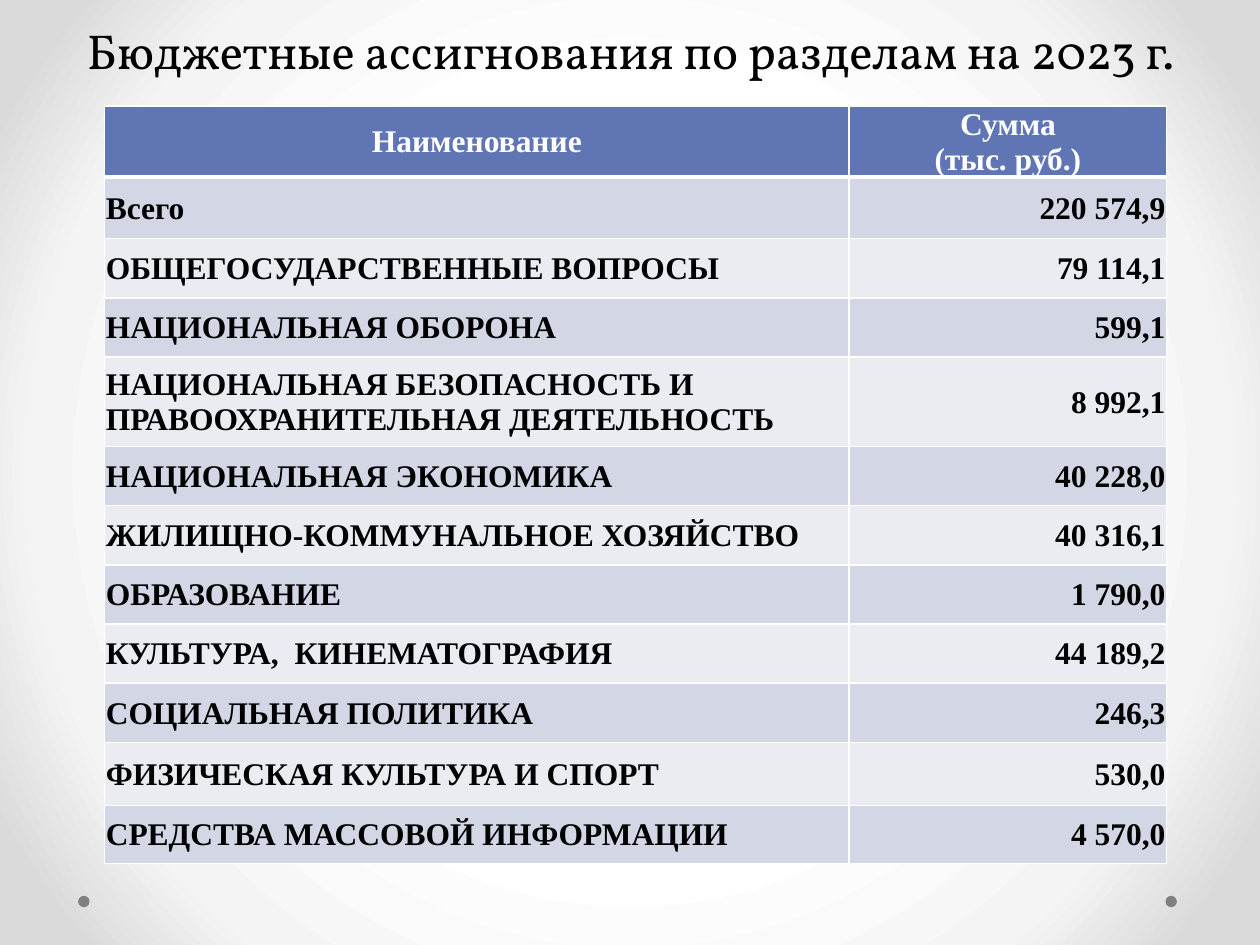
from dataclasses import dataclass

from pptx import Presentation
from pptx import oxml
from pptx.dml.color import RGBColor
from pptx.enum import shapes, text
from pptx.oxml import ns
from pptx.util import Inches, Pt

LEFT, CENTER, RIGHT, JUSTIFY = (
    text.PP_ALIGN.LEFT, text.PP_ALIGN.CENTER, text.PP_ALIGN.RIGHT, text.PP_ALIGN.JUSTIFY)


@dataclass(frozen=True)
class Theme:
    title_font: str = "Vollkorn"
    table_font: str = "Times New Roman"
    title_size: int = 28
    table_size: int = 18
    ink: str = "000000"
    white: str = "FFFFFF"
    header: str = "6076B4"
    bands: tuple = ("D2D6E5", "EAECF2")
    dot: str = "808080"
    backdrop: tuple = ((50, "FFFFFF"), (76, "F4F4F4"), (92, "DADADA"))


@dataclass(frozen=True)
class BudgetRow:
    name: str
    amount: str
    height: float = 0.47
    align: text.PP_ALIGN = JUSTIFY


THEME = Theme()
COLUMN_WIDTHS = (5.91, 2.52)
HEADER = BudgetRow("Наименование", "Сумма\v(тыс. руб.)", 0.55, CENTER)
ROWS = (
    BudgetRow("Всего", "220 574,9", 0.49, LEFT),
    BudgetRow("ОБЩЕГОСУДАРСТВЕННЫЕ ВОПРОСЫ", "79 114,1"),
    BudgetRow("НАЦИОНАЛЬНАЯ ОБОРОНА", "599,1", align=LEFT),
    BudgetRow("НАЦИОНАЛЬНАЯ БЕЗОПАСНОСТЬ И ПРАВООХРАНИТЕЛЬНАЯ ДЕЯТЕЛЬНОСТЬ",
              "8 992,1", 0.71, LEFT),
    BudgetRow("НАЦИОНАЛЬНАЯ ЭКОНОМИКА", "40 228,0"),
    BudgetRow("ЖИЛИЩНО-КОММУНАЛЬНОЕ ХОЗЯЙСТВО", "40 316,1"),
    BudgetRow("ОБРАЗОВАНИЕ", "1 790,0"),
    BudgetRow("КУЛЬТУРА,  КИНЕМАТОГРАФИЯ", "44 189,2"),
    BudgetRow("СОЦИАЛЬНАЯ ПОЛИТИКА", "246,3"),
    BudgetRow("ФИЗИЧЕСКАЯ КУЛЬТУРА И СПОРТ", "530,0", 0.5),
    BudgetRow("СРЕДСТВА МАССОВОЙ ИНФОРМАЦИИ", "4 570,0", 0.46),
)


def write(tf, content: str, *, font: str, size: int, color: str,
          align: text.PP_ALIGN, bold: bool = False) -> None:
    p = tf.paragraphs[0]
    p.text = content
    p.alignment = align
    for r in p.runs:
        r.font.name = font
        r.font.size = Pt(size)
        r.font.bold = bold
        r.font.color.rgb = RGBColor.from_string(color)


def set_backdrop(s) -> None:
    """Give the slide a radial gradient, which python-pptx cannot set itself."""
    stops = "".join(f'<a:gs pos="{pos * 1000}"><a:srgbClr val="{color}"/></a:gs>'
                    for pos, color in THEME.backdrop)
    bg = oxml.parse_xml(
        f'<p:bg {ns.nsdecls("p", "a")}><p:bgPr><a:gradFill rotWithShape="1">'
        f'<a:gsLst>{stops}</a:gsLst><a:path path="circle">'
        '<a:fillToRect l="50000" t="50000" r="50000" b="50000"/></a:path>'
        '</a:gradFill><a:effectLst/></p:bgPr></p:bg>')
    s.element.cSld.insert(0, bg)


def add_dot(s, left: float) -> None:
    sp = s.shapes.add_shape(shapes.MSO_SHAPE.OVAL, Inches(left), Inches(7.11),
                            Inches(0.09), Inches(0.09))
    sp.shadow.inherit = False
    sp.fill.solid()
    sp.fill.fore_color.rgb = RGBColor.from_string(THEME.dot)
    sp.line.fill.background()


def add_title(s, content: str) -> None:
    sp = s.shapes.title
    sp.left, sp.top, sp.width, sp.height = map(Inches, (0.28, 0.29, 9.45, 0.39))
    tf = sp.text_frame
    tf.auto_size = text.MSO_AUTO_SIZE.NONE
    tf.vertical_anchor = text.MSO_ANCHOR.BOTTOM
    write(tf, content, font=THEME.title_font, size=THEME.title_size,
          color=THEME.ink, align=CENTER)


def set_borders(cell, **widths: float) -> None:
    """Draw white borders; keys are L, R, T, B in schema order, values in points."""
    tc_pr = cell._tc.get_or_add_tcPr()
    for side, width in widths.items():
        tc_pr.append(oxml.parse_xml(
            f'<a:ln{side} {ns.nsdecls("a")} w="{Pt(width)}"><a:solidFill>'
            f'<a:srgbClr val="{THEME.white}"/></a:solidFill></a:ln{side}>'))


def fill_row(table, index: int, row: BudgetRow) -> None:
    is_header = index == 0
    table.rows[index].height = Inches(row.height)
    fill = THEME.header if is_header else THEME.bands[(index - 1) % 2]
    amount_align = CENTER if is_header else RIGHT
    contents = ((row.name, row.align), (row.amount, amount_align))
    for cell, (content, align) in zip(table.rows[index].cells, contents):
        set_borders(cell, L=1, R=1, T=3 if index == 1 else 1, B=3 if is_header else 1)
        cell.fill.solid()
        cell.fill.fore_color.rgb = RGBColor.from_string(fill)
        cell.vertical_anchor = text.MSO_ANCHOR.MIDDLE
        cell.margin_left = cell.margin_right = cell.margin_top = Inches(0.01)
        cell.margin_bottom = 0
        write(cell.text_frame, content, font=THEME.table_font, size=THEME.table_size,
              color=THEME.white if is_header else THEME.ink, align=align, bold=True)


def add_budget_table(s) -> None:
    rows = (HEADER, *ROWS)
    table = s.shapes.add_table(
        len(rows), len(COLUMN_WIDTHS), Inches(0.83), Inches(0.84),
        Inches(sum(COLUMN_WIDTHS)), Inches(sum(row.height for row in rows))).table
    table.horz_banding = False
    for column, width in zip(table.columns, COLUMN_WIDTHS):
        column.width = Inches(width)
    for index, row in enumerate(rows):
        fill_row(table, index, row)


def main() -> None:
    prs = Presentation()
    prs.slide_width, prs.slide_height = Inches(10), Inches(7.5)
    s = prs.slides.add_slide(prs.slide_layouts.get_by_name("Title Only"))
    set_backdrop(s)
    for left in (9.25, 0.62):
        add_dot(s, left)
    add_title(s, "Бюджетные ассигнования по разделам на 2023 г.")
    add_budget_table(s)
    prs.save("out.pptx")


if __name__ == "__main__":
    main()
